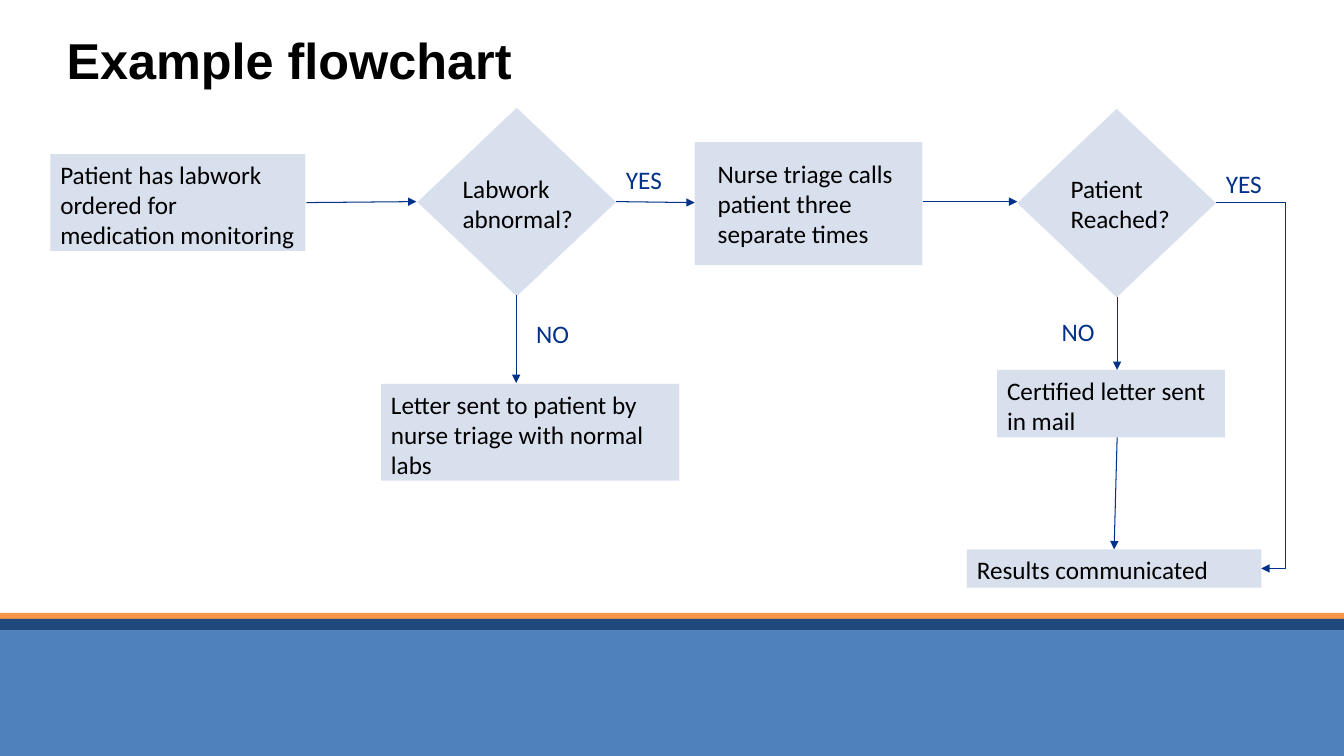
from lxml import etree
from pptx import Presentation
from pptx import util as u
from pptx.dml import color
from pptx.enum import shapes, text
from pptx.oxml import ns

COLORS = {"navy": "013189", "black": "000000", "orange": "F79646",
          "blue": "4F81BD", "dark": "1F497D"}
BODY = {"name": "Calibri", "size": u.Pt(18), "bold": False}
HEADING = {"name": "Arial", "size": u.Pt(36), "bold": True}
RECT = shapes.MSO_SHAPE.RECTANGLE
DIAMOND = shapes.MSO_SHAPE.DIAMOND


def rgb(name):
    """Return the named colour."""
    return color.RGBColor.from_string(COLORS[name])


def place(region, left, top, width, height):
    """Turn a box measured inside a region into slide lengths."""
    return [u.Inches(n) for n in (region[0] + left, region[1] + top, width, height)]


def write(frame, wording, formats, ink="black", anchor=text.MSO_ANCHOR.TOP):
    """Fill a text frame with one left-aligned paragraph."""
    frame.word_wrap = True
    frame.vertical_anchor = anchor
    paragraph = frame.paragraphs[0]
    paragraph.text = wording
    paragraph.alignment = text.PP_ALIGN.LEFT
    for attribute, value in formats.items():
        setattr(paragraph.font, attribute, value)
    paragraph.font.color.rgb = rgb(ink)


def add_block(slide, region, box, fill, kind=RECT, opacity=None):
    """Add a borderless filled block, optionally see-through."""
    block = slide.shapes.add_shape(kind, *place(region, *box))
    block.shadow.inherit = False
    block.line.fill.background()
    block.fill.solid()
    block.fill.fore_color.rgb = rgb(fill)
    if opacity:
        tint = block._element.spPr.find(".//" + ns.qn("a:srgbClr"))
        etree.SubElement(tint, ns.qn("a:alpha"), val=str(opacity * 1000))
    return block


def add_step(slide, region, box, wording="", kind=RECT):
    """Add a tinted flowchart step."""
    step = add_block(slide, region, box, "navy", kind, 15)
    if wording:
        write(step.text_frame, wording, BODY)


def add_label(slide, region, box, wording, ink="navy"):
    """Add free-standing text."""
    label = slide.shapes.add_textbox(*place(region, *box))
    write(label.text_frame, wording, BODY, ink)


def add_arrow(slide, region, start, end, bend=None):
    """Add an arrow, bent at a share of its width when one is given."""
    kind = shapes.MSO_CONNECTOR.ELBOW if bend else shapes.MSO_CONNECTOR.STRAIGHT
    ends = [u.Inches(region[i] + point[i]) for point in (start, end) for i in (0, 1)]
    arrow = slide.shapes.add_connector(kind, *ends)
    arrow.line.color.rgb = rgb("navy")
    arrow.line.width = u.Pt(0.75)
    properties = arrow._element.spPr
    etree.SubElement(properties.find(ns.qn("a:ln")), ns.qn("a:tailEnd"), type="triangle")
    etree.SubElement(properties, ns.qn("a:effectLst"))
    if bend:
        guides = properties.find(".//" + ns.qn("a:avLst"))
        etree.SubElement(guides, ns.qn("a:gd"), name="adj1",
                         fmla=f"val {round(bend * 100000)}")


def draw_footer(slide, region):
    """Draw the coloured bands along the bottom."""
    width, height = region[2:]
    for fill, top, depth in (("orange", 0, 0.11), ("blue", 0.11, height - 0.11),
                             ("dark", 0.06, 0.11)):
        add_block(slide, region, (0, top, width, depth), fill)


def draw_title(slide, region):
    """Place and write the heading."""
    title = slide.shapes.title
    title.left, title.top, title.width, title.height = place(region, 0, 0, *region[2:])
    write(title.text_frame, "Example flowchart", HEADING, anchor=text.MSO_ANCHOR.MIDDLE)


def draw_labwork(slide, region):
    """Draw the order, the labwork decision and the normal outcome."""
    add_step(slide, region, (0, 0.46, 2.53, 0.96),
             "Patient has labwork ordered for medication monitoring")
    add_step(slide, region, (3.64, 0, 1.97, 1.87), kind=DIAMOND)
    add_label(slide, region, (3.99, 0.6, 1.31, 0.67), "Labwork abnormal?", "black")
    add_step(slide, region, (3.28, 2.74, 2.96, 0.96),
             "Letter sent to patient by nurse triage with normal labs")
    add_label(slide, region, (4.72, 2.04, 0.78, 0.4), "NO")
    add_label(slide, region, (5.61, 0.51, 1.19, 0.4), "YES")
    for start, end in (((2.54, 0.94), (3.63, 0.93)), ((4.62, 1.86), (4.62, 2.73)),
                       ((5.61, 0.93), (6.39, 0.94))):
        add_arrow(slide, region, start, end)


def draw_contact(slide, region):
    """Draw the calls, the contact decision and its two outcomes."""
    add_step(slide, region, (0, 0.33, 2.26, 1.22))
    add_label(slide, region, (0.13, 0.44, 2.26, 0.96),
              "Nurse triage calls patient three separate times", "black")
    add_step(slide, region, (3.2, 0, 1.97, 1.87), kind=DIAMOND)
    add_label(slide, region, (3.63, 0.59, 1.31, 0.67), "Patient Reached?", "black")
    add_step(slide, region, (3, 2.59, 2.26, 0.67), "Certified letter sent in mail")
    add_step(slide, region, (2.7, 4.37, 2.92, 0.38), "Results communicated")
    add_label(slide, region, (3.54, 2.01, 0.78, 0.4), "NO")
    add_label(slide, region, (5.17, 0.54, 1.19, 0.4), "YES")
    for start, end in (((2.26, 0.92), (3.2, 0.92)), ((4.19, 1.87), (4.19, 2.59)),
                       ((4.19, 3.26), (4.16, 4.37))):
        add_arrow(slide, region, start, end)
    add_arrow(slide, region, (5.17, 0.93), (5.62, 4.56), bend=1.53)


def main():
    """Build the slide and save it."""
    deck = Presentation()
    deck.slide_width, deck.slide_height = u.Inches(13.33), u.Inches(7.5)
    slide = deck.slides.add_slide(deck.slide_layouts[5])
    draw_footer(slide, (0, 6.08, 13.33, 1.42))
    draw_title(slide, (0.56, 0, 12.11, 1.17))
    draw_labwork(slide, (0.5, 1.07, 6.39, 3.7))
    draw_contact(slide, (6.89, 1.08, 5.86, 4.75))
    deck.save("out.pptx")


if __name__ == "__main__":
    main()
